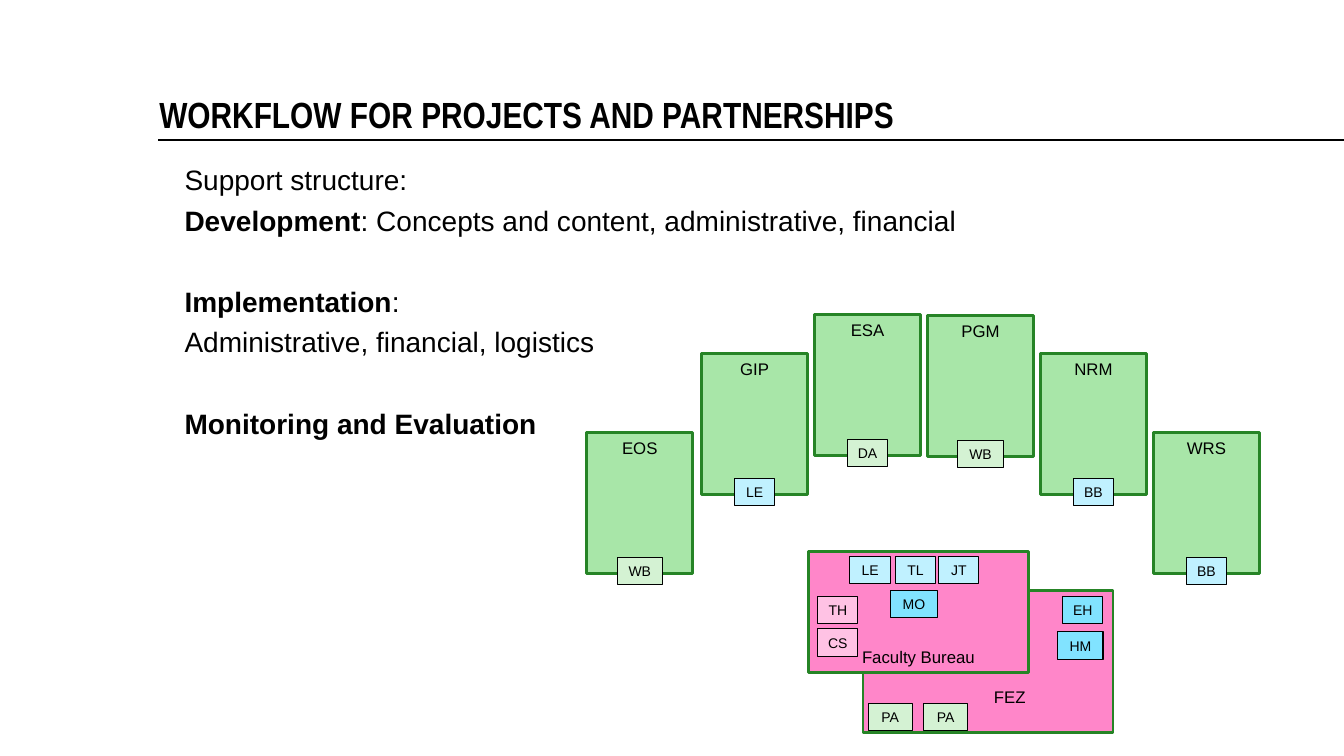
import pptx
import pptx.util
import pptx.dml.color
import pptx.enum.shapes
import pptx.enum.text
import pptx.oxml
from pptx.util import Inches, Pt

TITLE = "WORKFLOW FOR PROJECTS AND PARTNERSHIPS"
SUPPORT = [
    (0, "", "Support structure:"),
    (4, "Development", ": Concepts and content, administrative, financial"),
    (33, "Implementation", ":"),
    (4, "", "Administrative, financial, logistics"),
    (33, "Monitoring and Evaluation", ""),
]
UNITS = [
    ("EOS", 5.82, 4.29, "WB", "mint"),
    ("GIP", 6.96, 3.51, "LE", "ice"),
    ("ESA", 8.08, 3.12, "DA", "mint"),
    ("PGM", 9.2, 3.13, "WB", "mint"),
    ("NRM", 10.32, 3.51, "BB", "ice"),
    ("WRS", 11.44, 4.29, "BB", "ice"),
]
OFFICE_STAFF = [
    ("LE", 8.43, 5.52, 0.4, "ice"),
    ("TL", 8.88, 5.52, 0.4, "ice"),
    ("JT", 9.31, 5.52, 0.4, "ice"),
    ("EH", 10.54, 5.92, 0.4, "sky"),
    ("HM", 10.49, 6.27, 0.45, "sky"),
    ("MO", 8.83, 5.86, 0.47, "sky"),
    ("PA", 8.61, 6.98, 0.44, "mint"),
    ("PA", 9.16, 6.98, 0.44, "mint"),
    ("TH", 8.11, 5.92, 0.4, "rose"),
    ("CS", 8.11, 6.24, 0.4, "rose"),
]
COLORS = {
    "black": "000000", "border": "268426", "unit": "A8E6A8", "office": "FF86C9",
    "ice": "C0F1FF", "sky": "81E3FF", "mint": "D4F2D3", "rose": "FFC2E4",
}
UNIT_W, UNIT_H = 1.05, 1.4
TAG_H, TAG_DROP = 0.27, 1.24
TAG_WIDTHS = {"WB": 0.45}

ANCHOR = pptx.enum.text.MSO_ANCHOR
ALIGN = pptx.enum.text.PP_ALIGN


def rgb(name):
    return pptx.dml.color.RGBColor.from_string(COLORS[name])


def add_text(p, text, size=12, font="Arial", bold=False, align=ALIGN.CENTER):
    p.alignment = align
    r = p.add_run()
    r.text = text
    r.font.size = Pt(size)
    r.font.name = font
    r.font.bold = bold
    r.font.color.rgb = rgb("black")


def set_frame(tf, anchor, margins, wrap=True):
    tf.auto_size = pptx.enum.text.MSO_AUTO_SIZE.NONE
    tf.word_wrap = wrap
    tf.vertical_anchor = anchor
    tf.margin_left, tf.margin_top, tf.margin_right, tf.margin_bottom = map(Inches, margins)


def add_box(slide, x, y, w, h, fill, line="border", weight=2, text="", size=12,
            anchor=ANCHOR.TOP):
    sp = slide.shapes.add_shape(pptx.enum.shapes.MSO_SHAPE.RECTANGLE,
                                Inches(x), Inches(y), Inches(w), Inches(h))
    sp.shadow.inherit = False
    sp.fill.solid()
    sp.fill.fore_color.rgb = rgb(fill)
    sp.line.color.rgb = rgb(line)
    sp.line.width = Pt(weight)
    set_frame(sp.text_frame, anchor, (0, 0.05, 0, 0.05), wrap=False)
    if text:
        add_text(sp.text_frame.paragraphs[0], text, size=size)


def add_tag(slide, text, x, y, w, fill):
    add_box(slide, x, y, w, TAG_H, fill, line="black", weight=0.75, text=text,
            size=10, anchor=ANCHOR.MIDDLE)


def main():
    prs = pptx.Presentation()
    prs.slide_width, prs.slide_height = Inches(13.33), Inches(7.5)
    slide = prs.slides.add_slide(prs.slide_layouts[5])

    title = slide.shapes.title
    title.left, title.top = Inches(1.58), Inches(0.55)
    title.width, title.height = Inches(11.34), Inches(0.8)
    set_frame(title.text_frame, ANCHOR.BOTTOM, (0, 0, 0, 0))
    p = title.text_frame.paragraphs[0]
    p.line_spacing = Pt(25)
    p.space_before = Pt(0)
    add_text(p, TITLE, size=26, font="Arial Narrow", bold=True, align=ALIGN.LEFT)

    rule = slide.shapes.add_connector(pptx.enum.shapes.MSO_CONNECTOR.STRAIGHT,
                                      Inches(1.57), Inches(1.39), Inches(13.33), Inches(1.39))
    rule.line.color.rgb = rgb("black")
    rule.line.width = Pt(1)
    rule._element.spPr.append(pptx.oxml.parse_xml(
        '<a:effectLst xmlns:a="http://schemas.openxmlformats.org/drawingml/2006/main"/>'))

    body = slide.shapes.add_textbox(Inches(1.83), Inches(1.55), Inches(11.38), Inches(5.02))
    tf = body.text_frame
    set_frame(tf, ANCHOR.TOP, (0, 0.05, 0.1, 0.05))
    for i, (before, lead, rest) in enumerate(SUPPORT):
        p = tf.add_paragraph() if i else tf.paragraphs[0]
        p.line_spacing = Pt(25)
        p.space_before = Pt(before)
        for text, bold in ((lead, True), (rest, False)):
            if text:
                add_text(p, text, size=20, bold=bold, align=ALIGN.LEFT)

    add_box(slide, 8.56, 5.86, 2.48, 1.41, "office")
    fez = slide.shapes.add_textbox(Inches(8.93), Inches(6.76), Inches(2.17), Inches(0.3))
    set_frame(fez.text_frame, ANCHOR.TOP, (0.1, 0.05, 0.1, 0.05))
    add_text(fez.text_frame.paragraphs[0], "FEZ")
    add_box(slide, 8.02, 5.47, 2.18, 1.2, "office", text="Faculty Bureau",
            anchor=ANCHOR.BOTTOM)

    for name, x, y, contact, fill in UNITS:
        add_box(slide, x, y, UNIT_W, UNIT_H, "unit", text=name)
        w = TAG_WIDTHS.get(contact, 0.4)
        add_tag(slide, contact, x + (UNIT_W - w) / 2, y + TAG_DROP, w, fill)
    for name, x, y, w, fill in OFFICE_STAFF:
        add_tag(slide, name, x, y, w, fill)

    prs.save("out.pptx")


if __name__ == "__main__":
    main()
